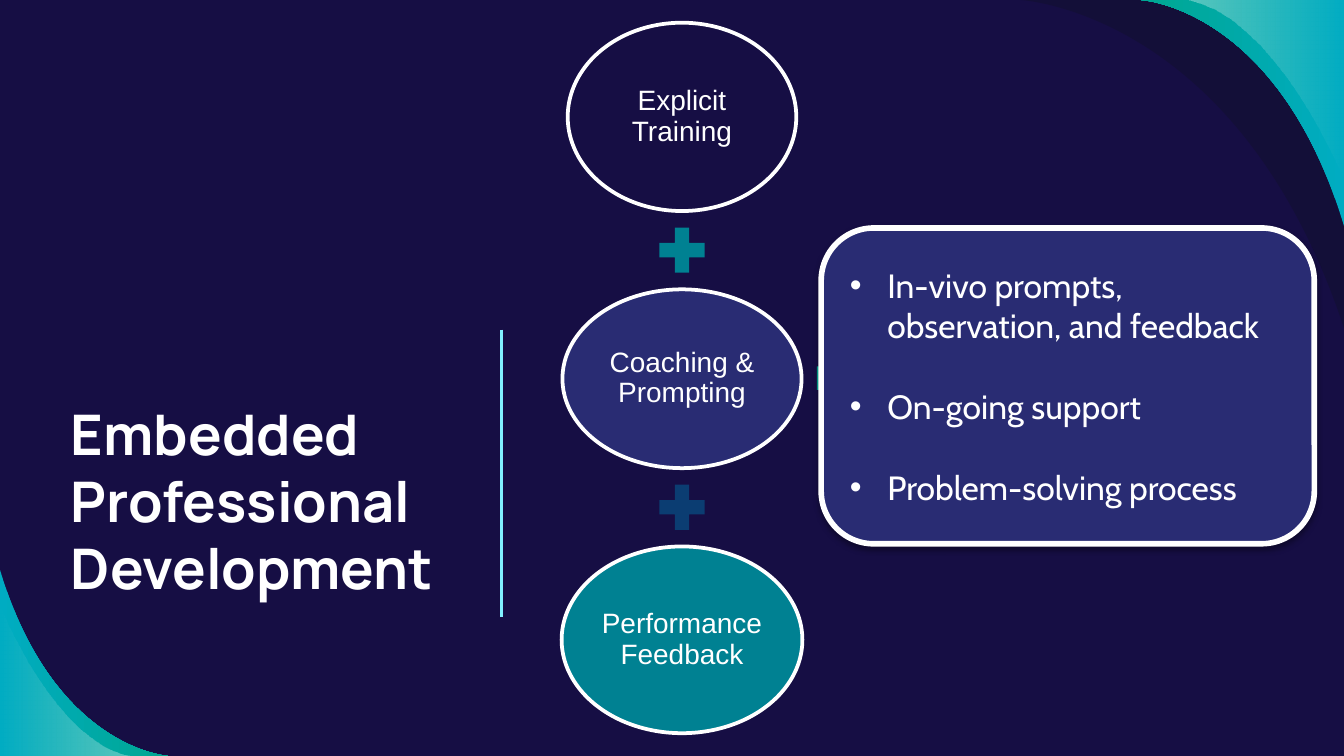
"""Builds the embedded professional development slide."""
from typing import NamedTuple

from lxml.etree import SubElement
from pptx import Presentation
from pptx.dml.color import RGBColor as RGB
from pptx.enum.shapes import MSO_CONNECTOR as CONN, MSO_SHAPE as SHAPE
from pptx.enum.text import MSO_ANCHOR as ANCHOR, PP_ALIGN as ALIGN
from pptx.oxml.ns import qn
from pptx.util import Cm, Pt

W, H = 25.4, 14.29
NAVY, INDIGO, TEAL, WHITE = "160E44", "292C73", "008192", "FFFFFF"
AQUA = [("00ACC2", 100), ("00A791", 100)]
GLOW = [(WHITE, 0), (WHITE, 36)]


class Corner(NamedTuple):
    curve: list
    tip: tuple
    stops: list
    angle: int


class Step(NamedTuple):
    text: str
    width: float
    height: float
    color: str
    plus: str


CORNERS = [
    Corner([(3.18, H), (3.18, H), (1.02, 14.17), (0, 10.77)], (0, H), AQUA, 0),
    Corner([(0, 11.43), (0, 11.43), (1.07, 14.12), (2.51, H)], (0, H), GLOW, 0),
    Corner([(W, 6.2), (23.42, 0.2), (19.28, 0), (19.28, 0)], (W, 0), [("12102F", 54)], 0),
    Corner([(21.56, 0), (21.56, 0), (24.16, 0.13), (W, 4.27)], (W, 0), AQUA, 180),
    Corner([(W, 3.43), (W, 3.43), (24.1, 0.2), (22.35, 0)], (W, 0), GLOW, 180),
]
STEPS = [
    Step("Explicit Training", 4.32, 3.56, NAVY, TEAL),
    Step("Coaching & Prompting", 4.52, 3.38, INDIGO, "0B3D72"),
    Step("Performance Feedback", 4.55, 3.53, TEAL, ""),
]
POINTS = [
    "In-vivo prompts, observation, and feedback",
    "On-going support",
    "Problem-solving process",
]


def rgb(color: str) -> RGB:
    return RGB.from_string(color)


def apply(obj, fmt: dict) -> None:
    for name, value in fmt.items():
        setattr(obj, name, value)


def paint(fill, color: str) -> None:
    fill.solid()
    fill.fore_color.rgb = rgb(color)


def add_run(p, text: str, font: str, size: float, bold: bool = False) -> None:
    p.text = text
    for r in p.runs:
        apply(r.font, {"name": font, "size": Pt(size), "bold": bold})
        r.font.color.rgb = rgb(WHITE)


def frame(tf, anchor, inset_x: float, inset_y: float) -> None:
    apply(tf, {
        "word_wrap": True, "vertical_anchor": anchor,
        "margin_left": Cm(inset_x), "margin_right": Cm(inset_x),
        "margin_top": Cm(inset_y), "margin_bottom": Cm(inset_y),
    })


def add_shape(s, kind, box: tuple, color: str, line: float = 0):
    sp = s.shapes.add_shape(kind, *map(Cm, box))
    sp.shadow.inherit = False
    paint(sp.fill, color)
    if line:
        paint(sp.line.fill, WHITE)
        sp.line.width = Pt(line)
    else:
        sp.line.fill.background()
    return sp


def bend(sp) -> None:
    """Turn the first three segments into one cubic curve."""
    segments = list(sp._element.spPr.iter(qn("a:lnTo")))[:3]
    curve = SubElement(segments[0].getparent(), qn("a:cubicBezTo"))
    segments[0].addprevious(curve)
    for segment in segments:
        curve.append(segment[0])
        segment.getparent().remove(segment)


def add_corner(s, corner: Corner) -> None:
    start, *rest = [tuple(map(Cm, pt)) for pt in corner.curve + [corner.tip]]
    builder = s.shapes.build_freeform(*start, scale=1.0)
    builder.add_line_segments(rest, close=True)
    sp = builder.convert_to_shape()
    bend(sp)
    sp.shadow.inherit = False
    sp.line.fill.background()
    if len(corner.stops) == 1:
        paint(sp.fill, corner.stops[0][0])
    else:
        sp.fill.gradient()
        sp.fill.gradient_angle = corner.angle
        for stop, (color, _) in zip(sp.fill.gradient_stops, corner.stops):
            stop.color.rgb = rgb(color)
    for clr, (_, alpha) in zip(sp._element.spPr.iter(qn("a:srgbClr")), corner.stops):
        SubElement(clr, qn("a:alpha"), val=str(alpha * 1000))


def add_title(s) -> None:
    tf = s.shapes.add_textbox(Cm(1.09), Cm(7.3), Cm(8.38), Cm(5.49)).text_frame
    frame(tf, ANCHOR.TOP, 0.25, 0.25)
    add_run(tf.paragraphs[0], "Embedded \vProfessional \vDevelopment", "Manrope", 30, True)


def add_steps(s, center: float = 12.89, top: float = 0.43) -> None:
    plus, gap = 1.16, 0.16
    for step in STEPS:
        box = (center - step.width / 2, top, step.width, step.height)
        sp = add_shape(s, SHAPE.OVAL, box, step.color, 2)
        frame(sp.text_frame, ANCHOR.MIDDLE, 0.05, 0.05)
        p = sp.text_frame.paragraphs[0]
        apply(p, {"alignment": ALIGN.CENTER, "line_spacing": 0.9})
        add_run(p, step.text, "Arial", 15)
        top += step.height + gap
        if step.plus:
            add_shape(s, SHAPE.MATH_PLUS, (center - plus / 2, top, plus, plus), step.plus)
            top += plus + gap


def add_arrow(s) -> None:
    sp = add_shape(s, SHAPE.RIGHT_ARROW, (15.44, 6.78, 0.64, 0.74), "00A791")
    sp.adjustments[0], sp.adjustments[1] = 0.6, 0.5


def add_divider(s) -> None:
    line = s.shapes.add_connector(CONN.STRAIGHT, Cm(9.48), Cm(6.23), Cm(9.48), Cm(11.66))
    paint(line.line.fill, "81F1FF")
    line.line.width = Pt(1.5)
    SubElement(line._element.spPr, qn("a:effectLst"))


def add_panel(s) -> None:
    sp = add_shape(s, SHAPE.ROUNDED_RECTANGLE, (15.52, 4.31, 9.32, 5.97), INDIGO, 3)
    effects = sp._element.spPr.find(qn("a:effectLst"))
    shadow = SubElement(effects, qn("a:outerShdw"), blurRad=str(Pt(3.1)), dist=str(Pt(1.8)),
                        dir="5400000", rotWithShape="0")
    clr = SubElement(shadow, qn("a:srgbClr"), val="000000")
    SubElement(clr, qn("a:alpha"), val="35000")
    tf = sp.text_frame
    frame(tf, ANCHOR.MIDDLE, 0.25, 0.13)
    for i, text in enumerate(POINTS):
        p = tf.add_paragraph() if i else tf.paragraphs[0]
        pPr = p._p.get_or_add_pPr()
        for name, value in {"marL": 0.71, "indent": -0.71}.items():
            pPr.set(name, str(Cm(value)))
        SubElement(pPr, qn("a:buFont"), typeface="Arial")
        SubElement(pPr, qn("a:buChar"), char="•")
        p.alignment = ALIGN.LEFT
        if i:
            p.space_before = Pt(21.7)
        add_run(p, text, "Cabin", 18)


def main() -> None:
    prs = Presentation()
    apply(prs, {"slide_width": Cm(W), "slide_height": Cm(H)})
    s = prs.slides.add_slide(prs.slide_layouts[6])
    paint(s.background.fill, NAVY)
    for corner in CORNERS:
        add_corner(s, corner)
    add_title(s)
    add_steps(s)
    add_arrow(s)
    add_divider(s)
    add_panel(s)
    prs.save("out.pptx")


if __name__ == "__main__":
    main()
